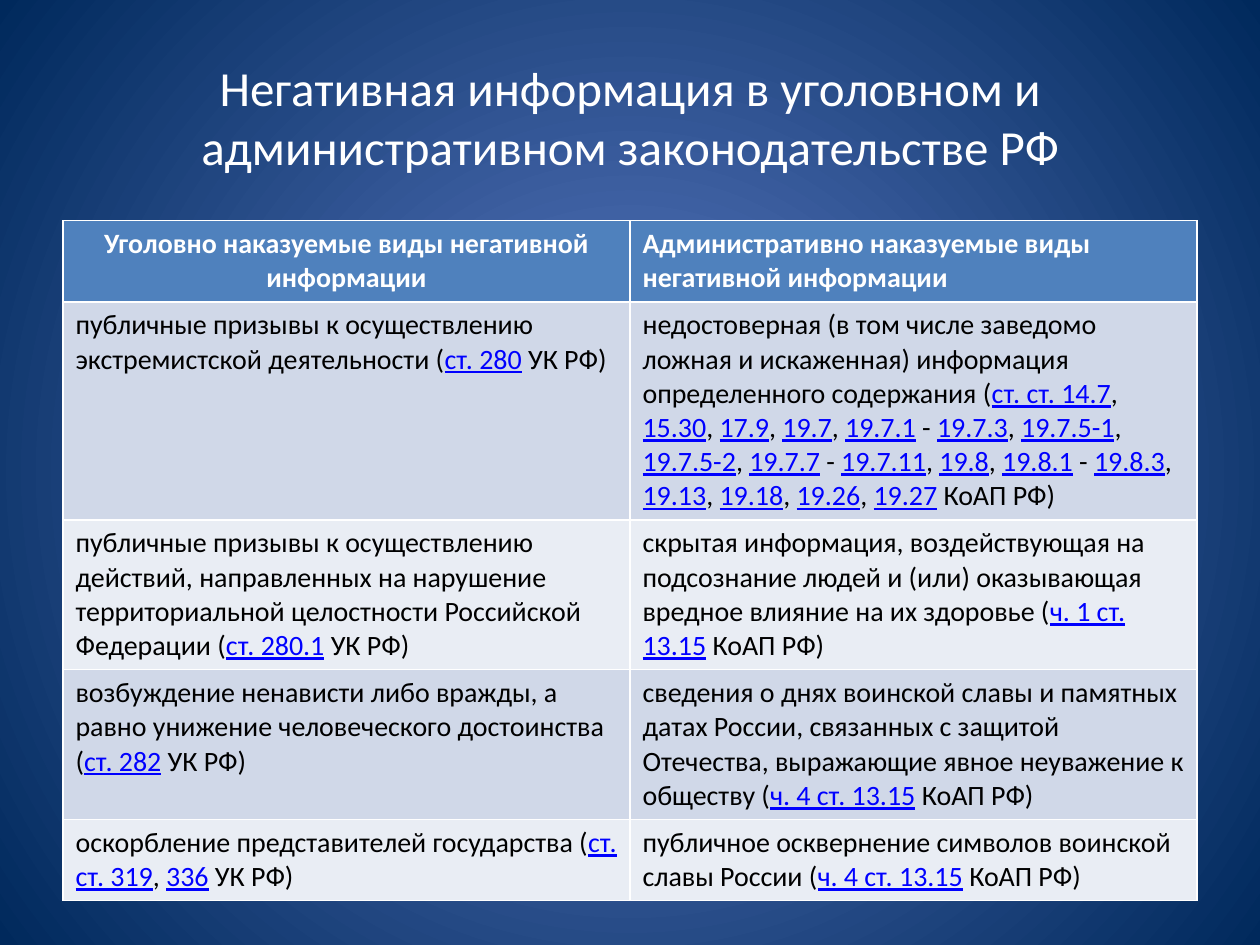
from lxml.etree import SubElement
from pptx import Presentation
from pptx.dml.color import RGBColor
from pptx.enum.text import MSO_ANCHOR, PP_ALIGN
from pptx.oxml.ns import qn
from pptx.util import Cm, Pt

FONT = "Calibri"
WHITE = RGBColor(0xFF, 0xFF, 0xFF)
BLACK = RGBColor(0x00, 0x00, 0x00)
LINK_BLUE = RGBColor(0x00, 0x00, 0xFF)
HEADER_BLUE = RGBColor(0x4F, 0x81, 0xBD)
BANDS = [RGBColor(0xD0, 0xD8, 0xE8), RGBColor(0xE9, 0xED, 0xF4)]
GLOW = [RGBColor(0x5E, 0x7C, 0xC5), RGBColor(0x00, 0x29, 0x5C)]

TITLE = ["Негативная информация в уголовном и", "административном законодательстве РФ"]
HEADERS = [
    ("Уголовно наказуемые виды негативной информации", PP_ALIGN.CENTER),
    ("Административно наказуемые виды негативной информации", PP_ALIGN.LEFT),
]
REFERENCE_MARK = "|"
OFFENCES = [
    (
        "публичные призывы к осуществлению экстремистской деятельности (|ст. 280| УК РФ)",
        "недостоверная (в том числе заведомо ложная и искаженная) информация "
        "определенного содержания (|ст. ст. 14.7|, |15.30|, |17.9|, |19.7|, |19.7.1| - |19.7.3|, "
        "|19.7.5-1|, |19.7.5-2|, |19.7.7| - |19.7.11|, |19.8|, |19.8.1| - |19.8.3|, "
        "|19.13|, |19.18|, |19.26|, |19.27| КоАП РФ)",
    ),
    (
        "публичные призывы к осуществлению действий, направленных на нарушение "
        "территориальной целостности Российской Федерации (|ст. 280.1| УК РФ)",
        "скрытая информация, воздействующая на подсознание людей и (или) оказывающая "
        "вредное влияние на их здоровье (|ч. 1 ст. 13.15| КоАП РФ)",
    ),
    (
        "возбуждение ненависти либо вражды, а равно унижение человеческого "
        "достоинства (|ст. 282| УК РФ)",
        "сведения о днях воинской славы и памятных датах России, связанных с защитой "
        "Отечества, выражающие явное неуважение к обществу (|ч. 4 ст. 13.15| КоАП РФ)",
    ),
    (
        "оскорбление представителей государства (|ст. ст. 319|, |336| УК РФ)",
        "публичное осквернение символов воинской славы России (|ч. 4 ст. 13.15| КоАП РФ)",
    ),
]
ROW_HEIGHTS = [1.63, 4.39, 3.02, 3.02, 1.63]
LEFT, WIDTH = Cm(1.27), Cm(22.86)


def add_run(paragraph, text, size, color, bold=False, underline=False):
    run = paragraph.add_run()
    run.text = text
    run.font.name = FONT
    run.font.size = Pt(size)
    run.font.bold = bold
    run.font.underline = underline
    run.font.color.rgb = color


def paint_background(slide):
    fill = slide.background.fill
    fill.gradient()
    for stop, color, position in zip(fill.gradient_stops, GLOW, (0, 1)):
        stop.color.rgb = color
        stop.position = position
    gradient = slide.element.find(".//" + qn("a:gradFill"))
    gradient.remove(gradient.find(qn("a:lin")))
    circle = SubElement(gradient, qn("a:path"), path="circle")
    SubElement(circle, qn("a:fillToRect"), l="50000", t="50000", r="50000", b="50000")


def style_cell(cell, color):
    cell.fill.solid()
    cell.fill.fore_color.rgb = color
    properties = cell._tc.get_or_add_tcPr()
    for index, side in enumerate(("a:lnL", "a:lnR", "a:lnT", "a:lnB")):
        border = SubElement(properties, qn(side), w=str(Pt(1)))
        properties.insert(index, border)
        solid = SubElement(border, qn("a:solidFill"))
        SubElement(solid, qn("a:srgbClr"), val=str(WHITE))


def add_title(slide):
    title = slide.shapes.title
    title.left, title.top, title.width, title.height = LEFT, Cm(0.76), WIDTH, Cm(3.18)
    title.text_frame.vertical_anchor = MSO_ANCHOR.MIDDLE
    heading = title.text_frame.paragraphs[0]
    heading.alignment = PP_ALIGN.CENTER
    for number, line in enumerate(TITLE):
        if number:
            heading.add_line_break()
        add_run(heading, line, 28, WHITE)


def add_offence_table(slide):
    table = slide.shapes.add_table(
        len(ROW_HEIGHTS), len(HEADERS), LEFT, Cm(4.45), WIDTH, Cm(sum(ROW_HEIGHTS))
    ).table
    for row, height in zip(table.rows, ROW_HEIGHTS):
        row.height = Cm(height)
    for column, (header, alignment) in enumerate(HEADERS):
        cell = table.cell(0, column)
        style_cell(cell, HEADER_BLUE)
        paragraph = cell.text_frame.paragraphs[0]
        paragraph.alignment = alignment
        add_run(paragraph, header, 16, WHITE, bold=True)
    for row, offences in enumerate(OFFENCES):
        for column, offence in enumerate(offences):
            cell = table.cell(row + 1, column)
            style_cell(cell, BANDS[row % 2])
            paragraph = cell.text_frame.paragraphs[0]
            for part, text in enumerate(offence.split(REFERENCE_MARK)):
                is_reference = part % 2 == 1
                color = LINK_BLUE if is_reference else BLACK
                add_run(paragraph, text, 16, color, underline=is_reference)


def main():
    presentation = Presentation()
    presentation.slide_width, presentation.slide_height = Cm(25.4), Cm(19.05)
    slide = presentation.slides.add_slide(presentation.slide_layouts[5])
    paint_background(slide)
    add_title(slide)
    add_offence_table(slide)
    presentation.save("out.pptx")


if __name__ == "__main__":
    main()
